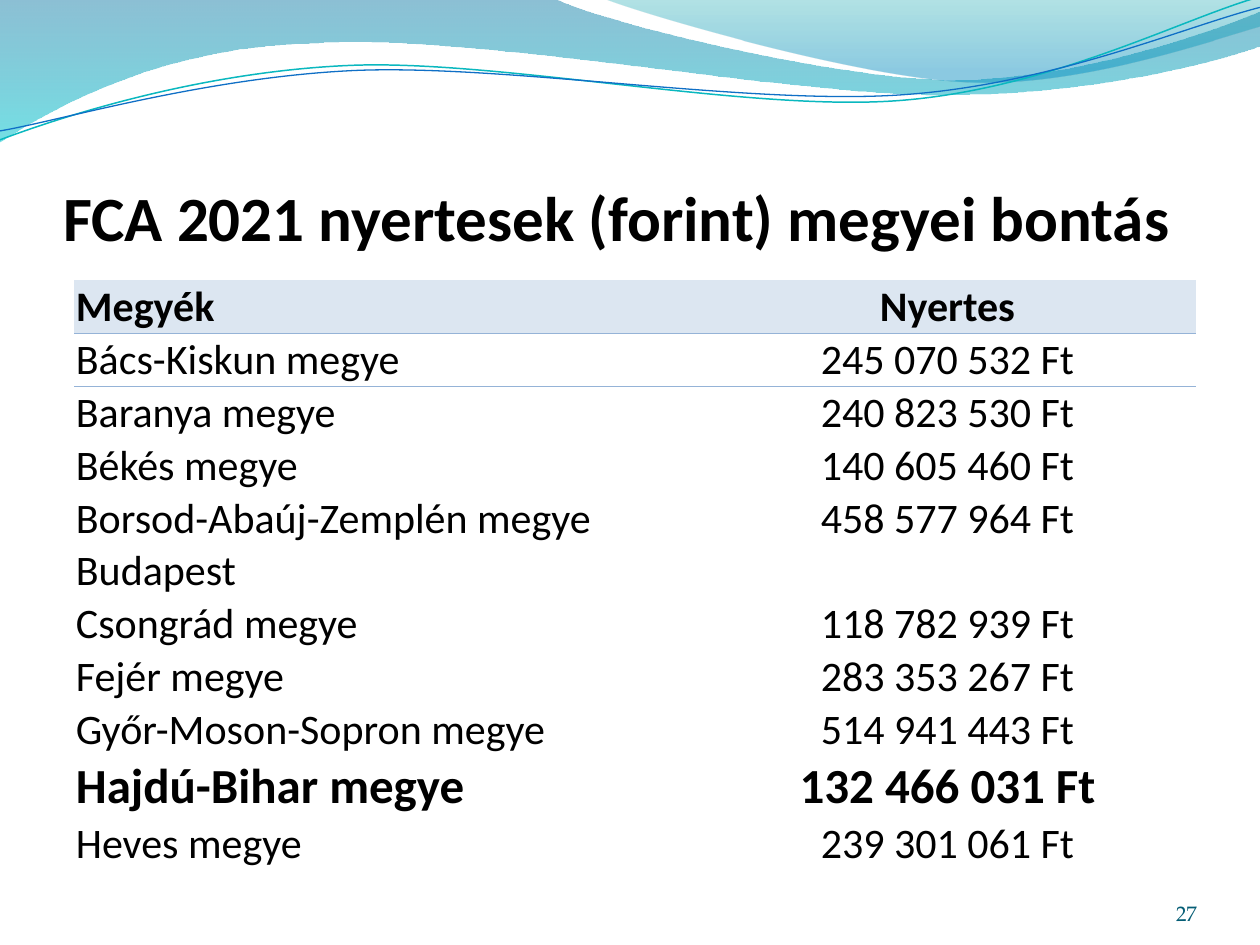
from pptx import Presentation
from pptx.dml.color import RGBColor
from pptx.enum.text import MSO_ANCHOR, MSO_AUTO_SIZE, PP_ALIGN
from pptx.oxml.ns import qn
from pptx.util import Cm, Pt
from lxml.etree import SubElement


def color(hex_string):
    return RGBColor.from_string(hex_string)


def add_wave(slide, start, segments, close):
    """Two numbers make a straight segment, six make a Bézier curve (all in cm)."""
    points = [(Cm(segment[i]), Cm(segment[i + 1]))
              for segment in segments for i in range(0, len(segment), 2)]
    builder = slide.shapes.build_freeform(Cm(start[0]), Cm(start[1]))
    builder.add_line_segments(points, close=close)
    shape = builder.convert_to_shape()
    shape.shadow.inherit = False
    # Join the three points of each curve into one Bézier element
    lines = iter(list(shape._element.iter(qn("a:lnTo"))))
    for segment in segments:
        line = next(lines)
        if len(segment) == 6:
            curve = SubElement(line.getparent(), qn("a:cubicBezTo"))
            line.addprevious(curve)
            for part in (line, next(lines), next(lines)):
                curve.append(part[0])
                part.getparent().remove(part)
    return shape


presentation = Presentation()
presentation.slide_width, presentation.slide_height = Cm(25.4), Cm(19.05)
slide = presentation.slides.add_slide(presentation.slide_layouts[5])

# Gradient waves: start, segments, (color, position, opacity in percent)
filled_waves = [
    ((0, 0),
     [(11.18, -0.03), (12.09, 0.43, 16.87, 1.6, 19.25, 1.6),
      (21.67, 1.6, 24.33, 0.66, 25.4, 0.23), (25.43, 0.91),
      (24.97, 1.12, 22.1, 1.93, 18.95, 1.91),
      (15.8, 1.91, 9.7, 0.71, 6.53, 0.86),
      (3.28, 0.91, 1.17, 2.11, -0.03, 2.87)],
     [("0074A1", 0, 45), ("00C6CF", 1, 55)]),
    ((12.17, -0.03),
     [(12.93, 0.28, 17.32, 1.57, 19.53, 1.65),
      (21.74, 1.75, 24.41, 0.81, 25.4, 0.53), (25.4, 0)],
     [("00A1A9", 0, 30), ("008BBF", 0.8, 45)]),
]
for start, segments, stops in filled_waves:
    shape = add_wave(slide, start, segments, close=True)
    shape.line.fill.background()
    shape.fill.gradient()
    shape.fill.gradient_angle = 270
    for stop, (hex_string, position, _) in zip(shape.fill.gradient_stops, stops):
        stop.color.rgb = color(hex_string)
        stop.position = position
    stop_colors = shape._element.spPr.iter(qn("a:srgbClr"))
    for stop_color, (_, _, opacity) in zip(list(stop_colors), stops):
        SubElement(stop_color, qn("a:alpha")).set("val", str(opacity * 1000))

# Thin wave lines
wave_lines = [
    ((0, 2.82),
     [(1.22, 2.36, 4.01, 1.45, 7.04, 1.32), (10.03, 1.19, 15.06, 2.26, 18.11, 2.03),
      (21.16, 1.8, 23.83, 0.38, 25.35, -0.05)], "0AB8BF", 0.85),
    ((0, 2.64),
     [(1.19, 2.44, 4.17, 1.55, 7.19, 1.42), (10.24, 1.3, 15.16, 2.13, 18.21, 1.91),
      (21.23, 1.7, 23.9, 0.53, 25.4, 0.15)], "0F6FC6", 0.75),
]
for start, segments, hex_string, width in wave_lines:
    shape = add_wave(slide, start, segments, close=False)
    shape.fill.background()
    shape.line.color.rgb = color(hex_string)
    shape.line.width = Pt(width)

# Title, in front of the waves
title = slide.shapes.title
slide.shapes._spTree.append(title._element)
title.left, title.top, title.width, title.height = Cm(1.27), Cm(1.95), Cm(22.86), Cm(3.17)
frame = title.text_frame
frame.text = "FCA 2021 nyertesek (forint) megyei bontás"
frame.auto_size = MSO_AUTO_SIZE.NONE
frame.vertical_anchor = MSO_ANCHOR.BOTTOM
frame.margin_left = frame.margin_right = frame.margin_bottom = 0
paragraph = frame.paragraphs[0]
paragraph.alignment = PP_ALIGN.LEFT
paragraph.font.name, paragraph.font.size, paragraph.font.bold = "Calibri", Pt(36), True
paragraph.font.color.rgb = color("000000")

# Table of counties
rows = [
    ("Megyék", "Nyertes"),
    ("Bács-Kiskun megye", "245 070 532 Ft"),
    ("Baranya megye", "240 823 530 Ft"),
    ("Békés megye", "140 605 460 Ft"),
    ("Borsod-Abaúj-Zemplén megye", "458 577 964 Ft"),
    ("Budapest", ""),
    ("Csongrád megye", "118 782 939 Ft"),
    ("Fejér megye", "283 353 267 Ft"),
    ("Győr-Moson-Sopron megye", "514 941 443 Ft"),
    ("Hajdú-Bihar megye", "132 466 031 Ft"),
    ("Heves megye", "239 301 061 Ft"),
]
highlighted = "Hajdú-Bihar megye"
table = slide.shapes.add_table(len(rows), 2, Cm(1.5), Cm(5.64), Cm(22.6), Cm(11.68)).table
table.first_row = table.horz_banding = False
no_style_no_grid = "{2D5ABB26-0587-4C30-8999-92F81FD0307C}"
table._tbl.tblPr.find(qn("a:tableStyleId")).text = no_style_no_grid
table.columns[0].width, table.columns[1].width = Cm(12.6), Cm(10)
for row_index, row in enumerate(rows):
    is_header, is_highlighted = row_index == 0, row[0] == highlighted
    table.rows[row_index].height = Cm(1.08 if is_header else 1.06)
    for column_index, text in enumerate(row):
        cell = table.cell(row_index, column_index)
        cell.text = text
        cell.vertical_anchor = MSO_ANCHOR.BOTTOM
        cell.margin_left = cell.margin_right = cell.margin_top = Cm(0.03)
        cell.margin_bottom = 0
        paragraph = cell.text_frame.paragraphs[0]
        paragraph.alignment = PP_ALIGN.CENTER if column_index else PP_ALIGN.LEFT
        paragraph.font.name = "Calibri"
        paragraph.font.size = Pt(28 if is_highlighted else 24)
        paragraph.font.bold = is_header or is_highlighted
        paragraph.font.color.rgb = color("000000")
        if is_header:
            cell.fill.solid()
            cell.fill.fore_color.rgb = color("DCE6F1")
        else:
            cell.fill.background()
        # Rule between the header and the first county
        if row_index < 2:
            properties = cell._tc.get_or_add_tcPr()
            side = "a:lnB" if is_header else "a:lnT"
            border = SubElement(properties, qn(side), w=str(Pt(0.5)))
            border_fill = SubElement(border, qn("a:solidFill"))
            SubElement(border_fill, qn("a:srgbClr"), val="95B3D7")
            properties.insert(0, border)

# Slide number
number_box = slide.shapes.add_textbox(Cm(22.02), Cm(17.65), Cm(2.11), Cm(1.02))
frame = number_box.text_frame
frame.word_wrap = True
frame.vertical_anchor = MSO_ANCHOR.BOTTOM
frame.margin_left = frame.margin_right = frame.margin_top = frame.margin_bottom = 0
paragraph = frame.paragraphs[0]
paragraph.text = "27"
paragraph.alignment = PP_ALIGN.RIGHT
paragraph.font.name, paragraph.font.size = "TeX Gyre Pagella", Pt(12)
paragraph.font.color.rgb = color("045D75")

presentation.save("out.pptx")
